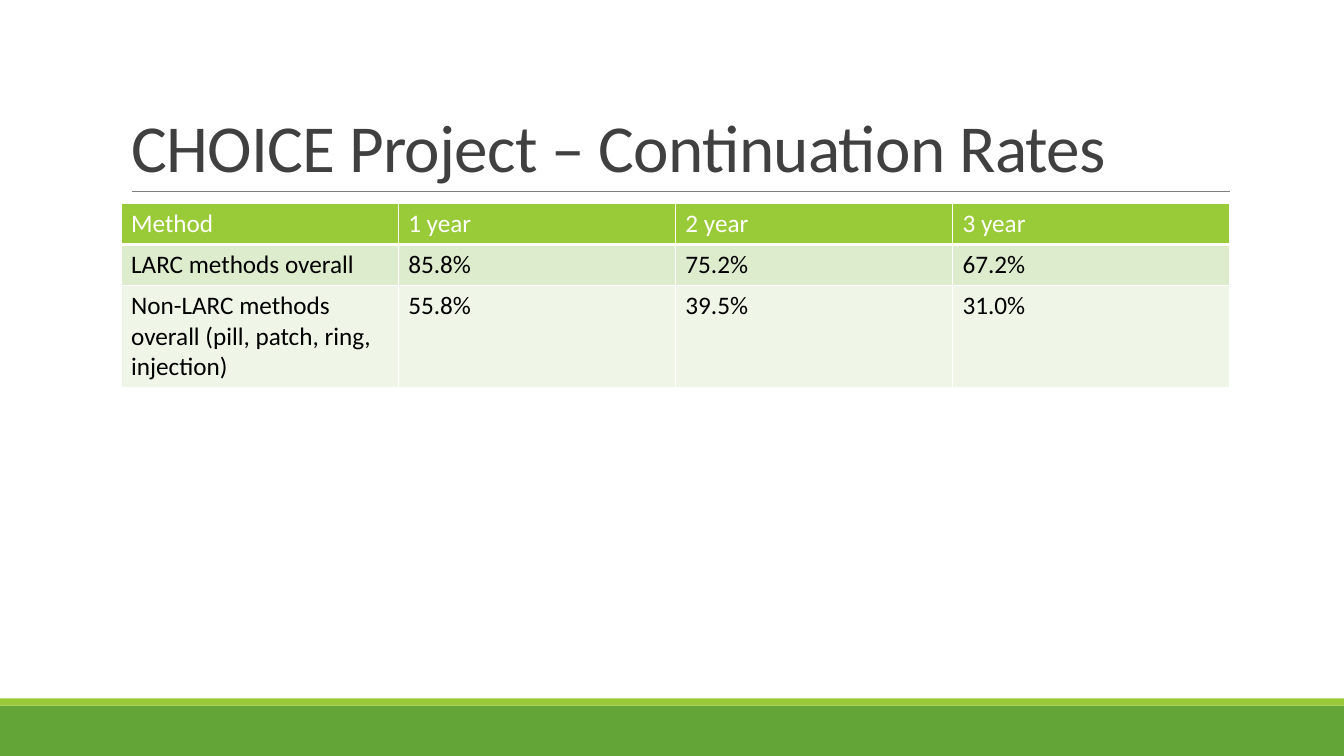
from dataclasses import dataclass

from lxml.etree import SubElement
from pptx import Presentation
from pptx.dml.color import RGBColor as Rgb
from pptx.enum.shapes import MSO_CONNECTOR as Link, MSO_SHAPE as Shape
from pptx.enum.text import MSO_ANCHOR as Anchor, MSO_AUTO_SIZE as Fit, PP_ALIGN as Align
from pptx.oxml.ns import qn
from pptx.util import Cm, Pt


@dataclass(frozen=True)
class Theme:
    font: str = "Calibri"
    head: int = 48
    body: int = 18
    white: str = "FFFFFF"
    black: str = "000000"
    dark: str = "404040"
    gray: str = "808080"
    green: str = "63A537"
    lime: str = "99CB38"
    pale: str = "DEECCE"
    faint: str = "EFF6E8"


theme = Theme()


def write(frame, text, size=theme.body, color=theme.black, space=None):
    para = frame.paragraphs[0]
    para.alignment = Align.LEFT
    para.line_spacing = space
    run = para.add_run()
    run.text = text
    font = run.font
    font.name, font.size, font.bold = theme.font, Pt(size), False
    font.color.rgb = Rgb.from_string(color)
    return run


def edge(cell, side, width):
    """Draw a white border on one side (L, R, T or B) of a cell."""
    line = SubElement(cell._tc.get_or_add_tcPr(), qn(f"a:ln{side}"), w=str(Pt(width)))
    fill = SubElement(line, qn("a:solidFill"))
    SubElement(fill, qn("a:srgbClr"), val=theme.white)


deck = Presentation()
deck.slide_width, deck.slide_height = Cm(33.87), Cm(19.05)
slide = deck.slides.add_slide(deck.slide_layouts[5])
shapes = slide.shapes

# Footer bands
for top, height, color in ((17.78, 1.27, theme.green), (17.6, 0.18, theme.lime)):
    band = shapes.add_shape(Shape.RECTANGLE, 0, Cm(top), deck.slide_width, Cm(height))
    band.shadow.inherit = False
    band.fill.solid()
    band.fill.fore_color.rgb = Rgb.from_string(color)
    band.line.fill.background()

# Title and its rule
rule = shapes.add_connector(Link.STRAIGHT, Cm(3.32), Cm(4.82), Cm(31), Cm(4.82))
rule.line.color.rgb = Rgb.from_string(theme.gray)
rule.line.width = Pt(0.5)
SubElement(rule._element.spPr, qn("a:effectLst"))

title = shapes.title
title.left, title.top, title.width, title.height = Cm(3.05), Cm(0.79), Cm(27.94), Cm(4.04)
frame = title.text_frame
frame.word_wrap = True
frame.auto_size = Fit.NONE
frame.vertical_anchor = Anchor.BOTTOM
run = write(frame, "CHOICE Project – Continuation Rates", theme.head, theme.dark, 0.85)
run.font._element.set("spc", "-50")

# Continuation rates
rates = (
    ("Method", "1 year", "2 year", "3 year"),
    ("LARC methods overall", "85.8%", "75.2%", "67.2%"),
    ("Non-LARC methods overall (pill, patch, ring, injection)", "55.8%", "39.5%", "31.0%"),
)
looks = (
    (theme.lime, theme.white, 3),
    (theme.pale, theme.black, 1),
    (theme.faint, theme.black, 1),
)
table = shapes.add_table(3, 4, Cm(3.05), Cm(5.13), Cm(27.94), Cm(4.61)).table
for row, high in zip(table.rows, (1.03, 1.03, 2.55)):
    row.height = Cm(high)
for row, texts, (fill, ink, base) in zip(table.rows, rates, looks):
    for cell, text in zip(row.cells, texts):
        for side, width in (("L", 1), ("R", 1), ("T", 1), ("B", base)):
            edge(cell, side, width)
        cell.fill.solid()
        cell.fill.fore_color.rgb = Rgb.from_string(fill)
        write(cell.text_frame, text, color=ink)

deck.save("out.pptx")
